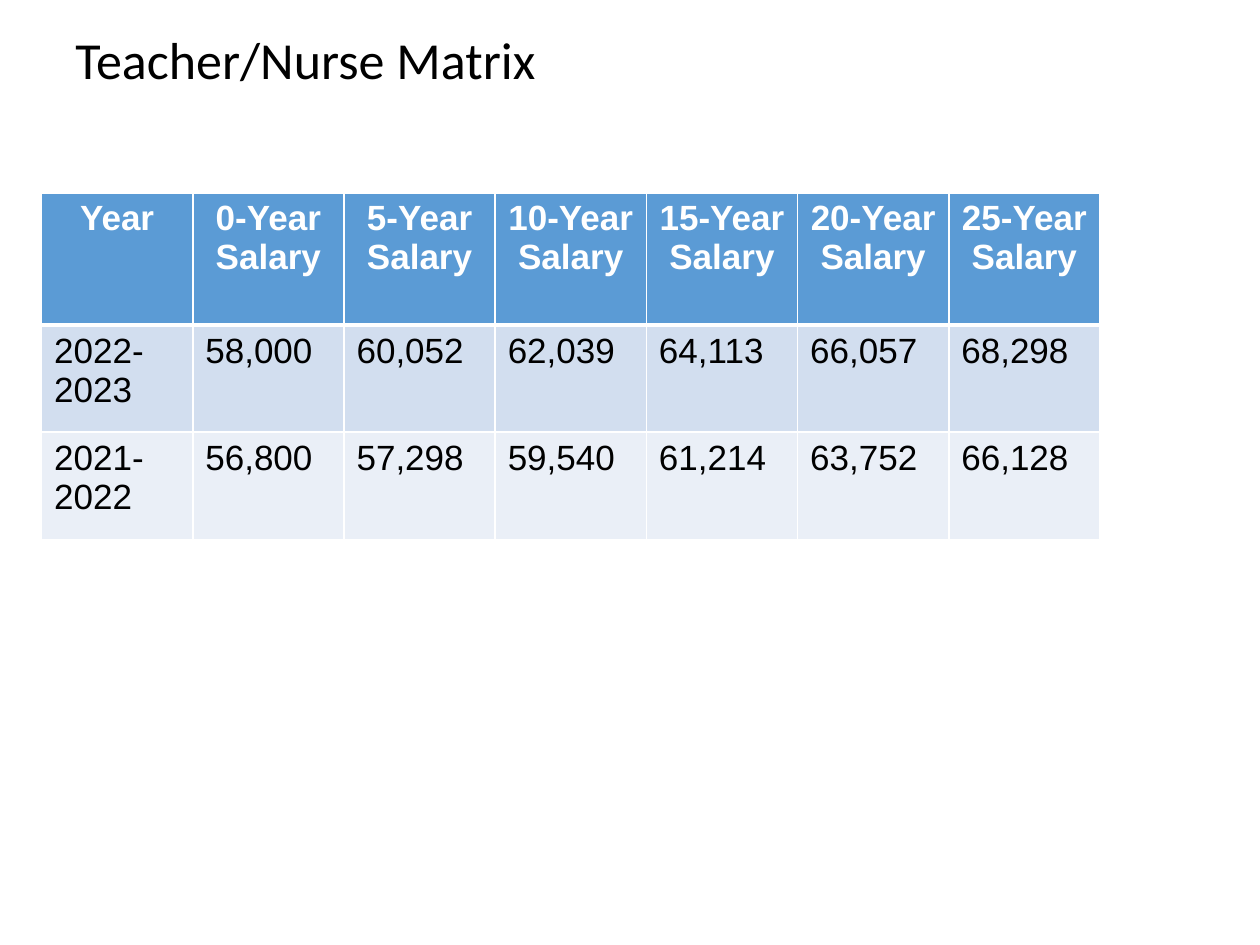
from pptx import Presentation
from pptx.dml.color import RGBColor
from pptx.enum.text import MSO_ANCHOR, PP_ALIGN
from pptx.oxml.ns import qn
from pptx.util import Inches, Pt
from lxml.etree import SubElement

TITLE = "Teacher/Nurse Matrix"
ROWS = [
    ["Year"] + [f"{years}-Year\nSalary" for years in range(0, 30, 5)],
    ["2022-2023", "58,000", "60,052", "62,039", "64,113", "66,057", "68,298"],
    ["2021-2022", "56,800", "57,298", "59,540", "61,214", "63,752", "66,128"],
]
ROW_FILLS = ["5B9BD5", "D2DEEF", "EAEFF7"]
ROW_HEIGHTS = [1.05, 0.85, 0.85]
COLUMN_WIDTH = 1.2


def color(value):
    return RGBColor.from_string(value)


def style_text(paragraph, font, size, value, bold=False):
    for span in paragraph.runs:
        span.font.name = font
        span.font.size = Pt(size)
        span.font.bold = bold
        span.font.color.rgb = color(value)


def add_borders(cell, bottom_width):
    properties = cell._tc.get_or_add_tcPr()
    widths = {"a:lnL": 1, "a:lnR": 1, "a:lnT": 1, "a:lnB": bottom_width}
    for position, (tag, width) in enumerate(widths.items()):
        line = SubElement(properties, qn(tag), w=str(Pt(width)))
        fill = SubElement(line, qn("a:solidFill"))
        SubElement(fill, qn("a:srgbClr"), val="FFFFFF")
        properties.insert(position, line)  # borders come before the fill


deck = Presentation()
deck.slide_width, deck.slide_height = Inches(10), Inches(7.5)
page = deck.slides.add_slide(deck.slide_layouts[6])

# Title
box = page.shapes.add_textbox(Inches(0.5), Inches(0.25), Inches(8.95), Inches(0.5))
frame = box.text_frame
frame.word_wrap = True
frame.vertical_anchor = MSO_ANCHOR.MIDDLE
frame.text = TITLE
frame.paragraphs[0].line_spacing = 0.9
style_text(frame.paragraphs[0], "Calibri", 29.7, "000000")

# Salary table
columns = len(ROWS[0])
table = page.shapes.add_table(
    len(ROWS), columns, Inches(0.33), Inches(1.53),
    Inches(COLUMN_WIDTH * columns), Inches(sum(ROW_HEIGHTS)),
).table
for column in table.columns:
    column.width = Inches(COLUMN_WIDTH)

for r, (texts, fill, height) in enumerate(zip(ROWS, ROW_FILLS, ROW_HEIGHTS)):
    header = r == 0
    table.rows[r].height = Inches(height)
    for c, text in enumerate(texts):
        cell = table.cell(r, c)
        cell.text_frame.text = text
        cell.fill.solid()
        cell.fill.fore_color.rgb = color(fill)
        add_borders(cell, 3 if header else 1)
        for para in cell.text_frame.paragraphs:
            para.alignment = PP_ALIGN.CENTER if header else PP_ALIGN.LEFT
            style_text(para, "Arial", 20, "FFFFFF" if header else "000000", header)

deck.save("out.pptx")
